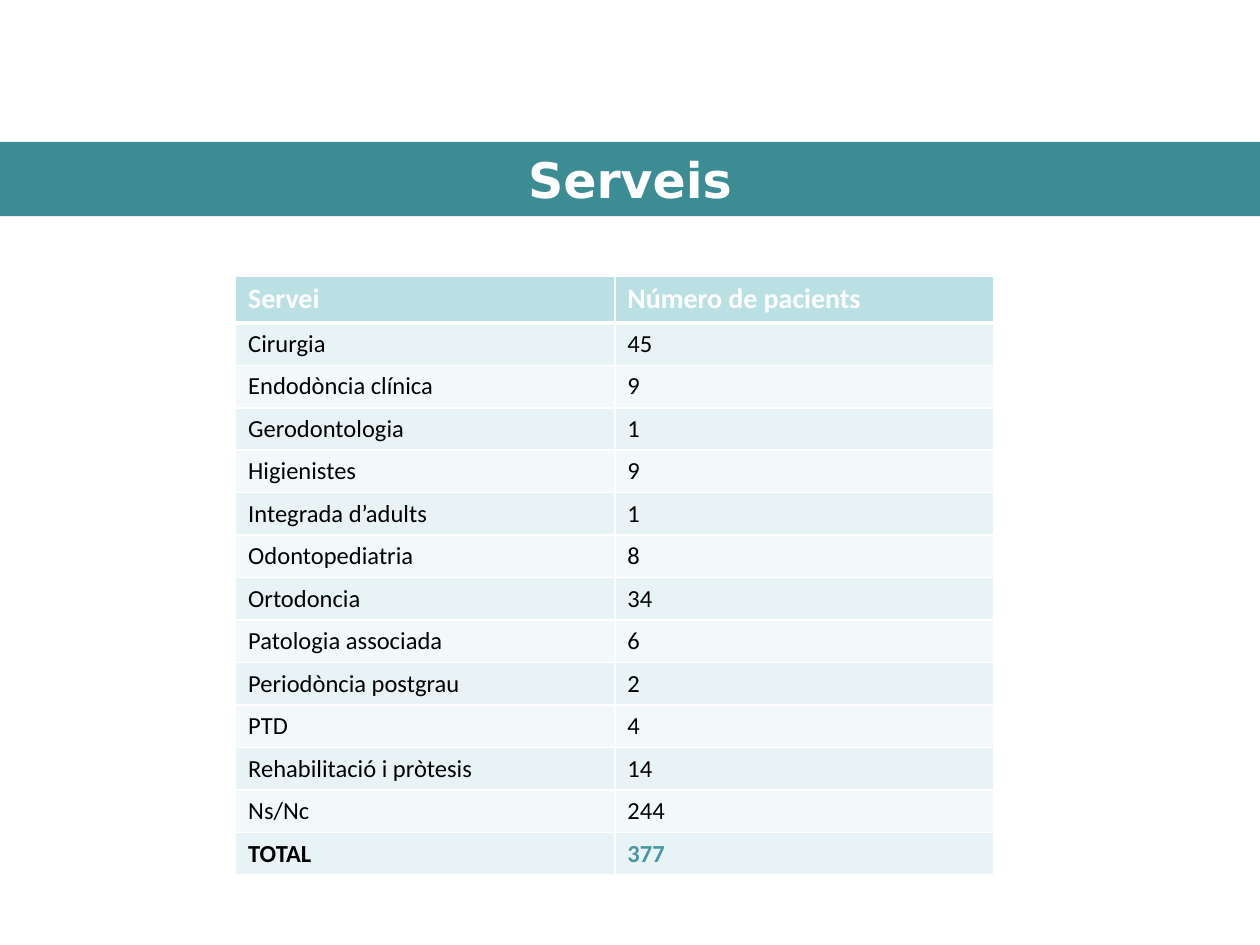
"""Build the slide that lists the number of patients per service."""
from dataclasses import dataclass

import pptx
import pptx.dml.color
import pptx.enum.shapes
import pptx.enum.text
import pptx.oxml
import pptx.oxml.ns
import pptx.util

WIDTH, HEIGHT = pptx.util.Inches(10), pptx.util.Inches(7.5)
WHITE, BLACK, TEAL, ACCENT = "FFFFFF", "000000", "3C8C93", "4597A0"
HEADER_FILL, BANDS = "BBE0E3", ("F3F9FA", "E7F3F4")
ROW_HEIGHT = pptx.util.Inches(0.29)
THIN, THICK = 1, 3


@dataclass(frozen=True)
class Service:
    """A service and its number of patients."""

    name: str
    patients: int


SERVICES = [
    Service("Cirurgia", 45),
    Service("Endodòncia clínica", 9),
    Service("Gerodontologia", 1),
    Service("Higienistes", 9),
    Service("Integrada d’adults", 1),
    Service("Odontopediatria", 8),
    Service("Ortodoncia", 34),
    Service("Patologia associada", 6),
    Service("Periodòncia postgrau", 2),
    Service("PTD", 4),
    Service("Rehabilitació i pròtesis", 14),
    Service("Ns/Nc", 244),
]


def rgb(value: str) -> pptx.dml.color.RGBColor:
    """Turn a hex string into a colour."""
    return pptx.dml.color.RGBColor.from_string(value)


def write(tf, text: str, color: str, **formats) -> None:
    """Write one formatted run into the first paragraph."""
    r = tf.paragraphs[0].add_run()
    r.text = text
    for name, value in formats.items():
        setattr(r.font, name, value)
    r.font.color.rgb = rgb(color)


def set_borders(cell, top: int, bottom: int) -> None:
    """Draw white borders on the four sides of a cell."""
    tc_pr = cell._tc.get_or_add_tcPr()
    sides = {"lnL": THIN, "lnR": THIN, "lnT": top, "lnB": bottom}
    for i, (tag, points) in enumerate(sides.items()):
        tc_pr.insert(i, pptx.oxml.parse_xml(
            f'<a:{tag} {pptx.oxml.ns.nsdecls("a")} w="{pptx.util.Pt(points)}">'
            f'<a:solidFill><a:srgbClr val="{WHITE}"/></a:solidFill></a:{tag}>'))


def add_title(s, text: str) -> None:
    """Draw the title band across the slide."""
    sp = s.shapes.add_shape(
        pptx.enum.shapes.MSO_SHAPE.RECTANGLE,
        0, round(HEIGHT * 0.15), WIDTH, pptx.util.Inches(0.59))
    sp.shadow.inherit = False
    sp.fill.solid()
    sp.fill.fore_color.rgb = rgb(TEAL)
    sp.line.fill.background()
    tf = sp.text_frame
    tf.vertical_anchor = pptx.enum.text.MSO_ANCHOR.MIDDLE
    tf.paragraphs[0].alignment = pptx.enum.text.PP_ALIGN.CENTER
    write(tf, text, WHITE, name="DejaVu Sans", size=pptx.util.Pt(28), bold=True)


def add_services(s, services: list[Service]) -> None:
    """Draw the table of services with a header and a total."""
    total = sum(service.patients for service in services)
    rows = [("Servei", "Número de pacients"),
            *((service.name, str(service.patients)) for service in services),
            ("TOTAL", str(total))]
    last = len(rows) - 1
    table = s.shapes.add_table(
        len(rows), 2, pptx.util.Inches(1.87), pptx.util.Inches(2.19),
        pptx.util.Inches(6.02), ROW_HEIGHT * len(rows)).table
    for i, row in enumerate(rows):
        table.rows[i].height = ROW_HEIGHT
        header = i == 0
        for j, text in enumerate(row):
            cell = table.cell(i, j)
            cell.fill.solid()
            cell.fill.fore_color.rgb = rgb(HEADER_FILL if header else BANDS[i % 2])
            set_borders(cell, THICK if i == 1 else THIN, THICK if header else THIN)
            color = WHITE if header else ACCENT if (i, j) == (last, 1) else BLACK
            write(cell.text_frame, text, color, name="Calibri",
                  size=pptx.util.Pt(16 if header else 14), bold=i in (0, last))


def main() -> None:
    """Build and save the slide."""
    prs = pptx.Presentation()
    prs.slide_width, prs.slide_height = WIDTH, HEIGHT
    s = prs.slides.add_slide(prs.slide_layouts[6])
    add_title(s, "Serveis")
    add_services(s, SERVICES)
    prs.save("out.pptx")


if __name__ == "__main__":
    main()
